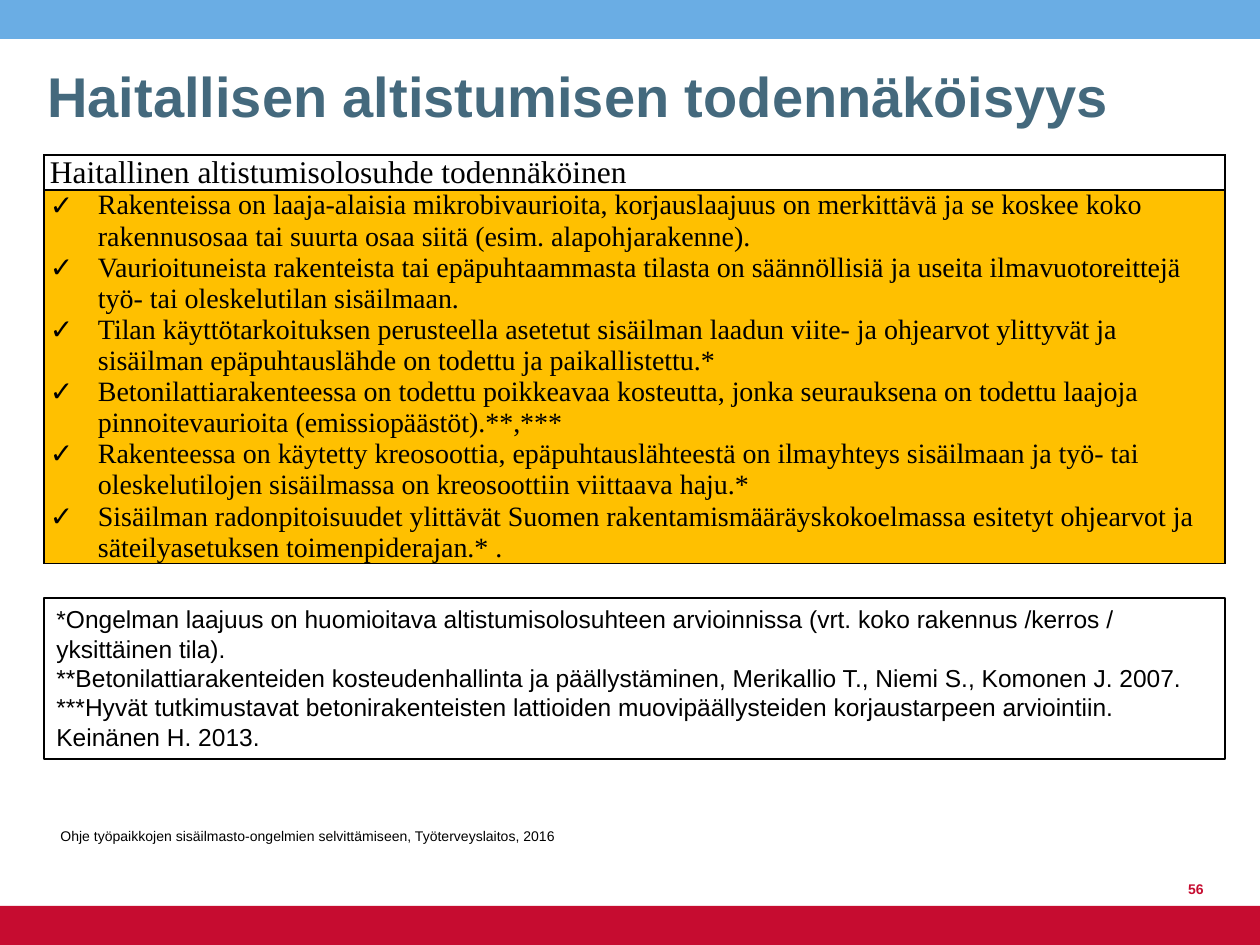
from dataclasses import dataclass

from lxml.etree import SubElement as Sub
from pptx import Presentation
from pptx.dml.color import RGBColor as Rgb
from pptx.enum.shapes import MSO_SHAPE as Shape
from pptx.enum.text import MSO_ANCHOR as Anchor, PP_ALIGN as Align
from pptx.oxml.ns import qn
from pptx.util import Pt


@dataclass(frozen=True)
class Theme:
    """Colours, fonts and type sizes of the slide."""
    sky: str = "6AADE4"
    red: str = "C60C30"
    slate: str = "44697D"
    gold: str = "FFC000"
    black: str = "000000"
    sans: str = "Arial"
    serif: str = "Times New Roman"
    title: int = 32
    head: int = 18
    body: int = 16
    note: int = 14
    small: int = 8


T = Theme()
WIDE, HIGH, BAR = 1260, 945, 39
TITLE = "Haitallisen altistumisen todennäköisyys"
HEAD = "Haitallinen altistumisolosuhde todennäköinen"
SIGNS = [
    "Rakenteissa on laaja-alaisia mikrobivaurioita, korjauslaajuus on merkittävä ja se koskee koko rakennusosaa tai suurta osaa siitä (esim. alapohjarakenne).",
    "Vaurioituneista rakenteista tai epäpuhtaammasta tilasta on säännöllisiä ja useita ilmavuotoreittejä työ- tai oleskelutilan sisäilmaan.",
    "Tilan käyttötarkoituksen perusteella asetetut sisäilman laadun viite- ja ohjearvot ylittyvät ja sisäilman epäpuhtauslähde on todettu ja paikallistettu.*",
    "Betonilattiarakenteessa on todettu poikkeavaa kosteutta, jonka seurauksena on todettu laajoja pinnoitevaurioita (emissiopäästöt).**,***",
    "Rakenteessa on käytetty kreosoottia, epäpuhtauslähteestä on ilmayhteys sisäilmaan ja työ- tai oleskelutilojen sisäilmassa on kreosoottiin viittaava haju.*",
    "Sisäilman radonpitoisuudet ylittävät Suomen rakentamismääräyskokoelmassa esitetyt ohjearvot ja säteilyasetuksen toimenpiderajan.* .",
]
NOTES = [
    "*Ongelman laajuus on huomioitava altistumisolosuhteen arvioinnissa (vrt. koko rakennus /kerros / yksittäinen tila).",
    "**Betonilattiarakenteiden kosteudenhallinta ja päällystäminen, Merikallio T., Niemi S., Komonen J. 2007.",
    "***Hyvät tutkimustavat betonirakenteisten lattioiden muovipäällysteiden korjaustarpeen arviointiin. Keinänen H. 2013.",
]
SOURCE = "Ohje työpaikkojen sisäilmasto-ongelmien selvittämiseen, Työterveyslaitos, 2016"


def px(n):
    """Turn pixels into EMU."""
    return round(n * 914400 / 126)


def write(frame, lines, size, font=T.sans, color=T.black, bold=False,
          align=Align.LEFT, mark=None, indent=48):
    """Fill a text frame with formatted paragraphs."""
    frame.word_wrap = True
    for i, line in enumerate(lines):
        para = frame.paragraphs[0] if i == 0 else frame.add_paragraph()
        para.alignment = align
        if mark:
            props = para._p.get_or_add_pPr()
            props.set("marL", str(px(indent)))
            props.set("indent", str(-px(indent)))
            Sub(props, qn("a:buFont"), typeface=T.sans)
            Sub(props, qn("a:buChar"), char=mark)
        run = para.add_run()
        run.text = line
        face = run.font
        face.name, face.size, face.bold = font, Pt(size), bold
        face.color.rgb = Rgb.from_string(color)


def label(slide, box, lines, size, anchor=Anchor.TOP, inset=None, **kind):
    """Add a text box with its lines."""
    shape = slide.shapes.add_textbox(*map(px, box))
    frame = shape.text_frame
    frame.vertical_anchor = anchor
    if inset is not None:
        frame.margin_top, frame.margin_bottom = 0, px(inset)
    write(frame, lines, size, **kind)
    return shape


def band(slide, box, color):
    """Add a plain colour bar."""
    shape = slide.shapes.add_shape(Shape.RECTANGLE, *map(px, box))
    shape.shadow.inherit = False
    shape.fill.solid()
    shape.fill.fore_color.rgb = Rgb.from_string(color)
    shape.line.fill.background()


def edge(cell):
    """Draw a thin black border round a cell."""
    props = cell._tc.get_or_add_tcPr()
    for i, side in enumerate(("lnL", "lnR", "lnT", "lnB")):
        line = props.makeelement(qn(f"a:{side}"), {"w": str(Pt(1))})
        props.insert(i, line)
        Sub(Sub(line, qn("a:solidFill")), qn("a:srgbClr"), val=T.black)


def signs(slide, box, head=35):
    """Add the table of signs under its heading."""
    grid = slide.shapes.add_table(2, 1, *map(px, box)).table
    grid.first_row = grid.horz_banding = False
    for row, high in zip(grid.rows, (head, box[3] - head)):
        row.height = px(high)
    top, main = grid.cell(0, 0), grid.cell(1, 0)
    for cell in (top, main):
        cell.margin_left = cell.margin_right = px(6)
        cell.margin_top = cell.margin_bottom = 0
        edge(cell)
    top.fill.background()
    main.fill.solid()
    main.fill.fore_color.rgb = Rgb.from_string(T.gold)
    write(top.text_frame, [HEAD], T.head, font=T.serif)
    write(main.text_frame, SIGNS, T.body, font=T.serif, mark="✓")


def notes(slide, box):
    """Add the framed footnotes."""
    shape = label(slide, box, NOTES, T.note)
    shape.line.color.rgb = Rgb.from_string(T.black)
    shape.line.width = Pt(0.75)


def build():
    """Build and save the slide."""
    deck = Presentation()
    deck.slide_width, deck.slide_height = px(WIDE), px(HIGH)
    slide = deck.slides.add_slide(deck.slide_layouts[6])
    band(slide, (0, 0, WIDE, BAR), T.sky)
    band(slide, (0, HIGH - BAR, WIDE, BAR), T.red)
    signs(slide, (44, 155, 1181, 408))
    label(slide, (35, 16, 1201, 158), [TITLE], T.title, Anchor.MIDDLE,
          color=T.slate, bold=True)
    label(slide, (1147, 854, 69, 50), ["56"], T.small, Anchor.BOTTOM,
          color=T.red, bold=True, align=Align.RIGHT)
    label(slide, (48, 824, 983, 49), [SOURCE], T.small, Anchor.BOTTOM, inset=40)
    notes(slide, (44, 598, 1181, 161))
    deck.save("out.pptx")


if __name__ == "__main__":
    build()
